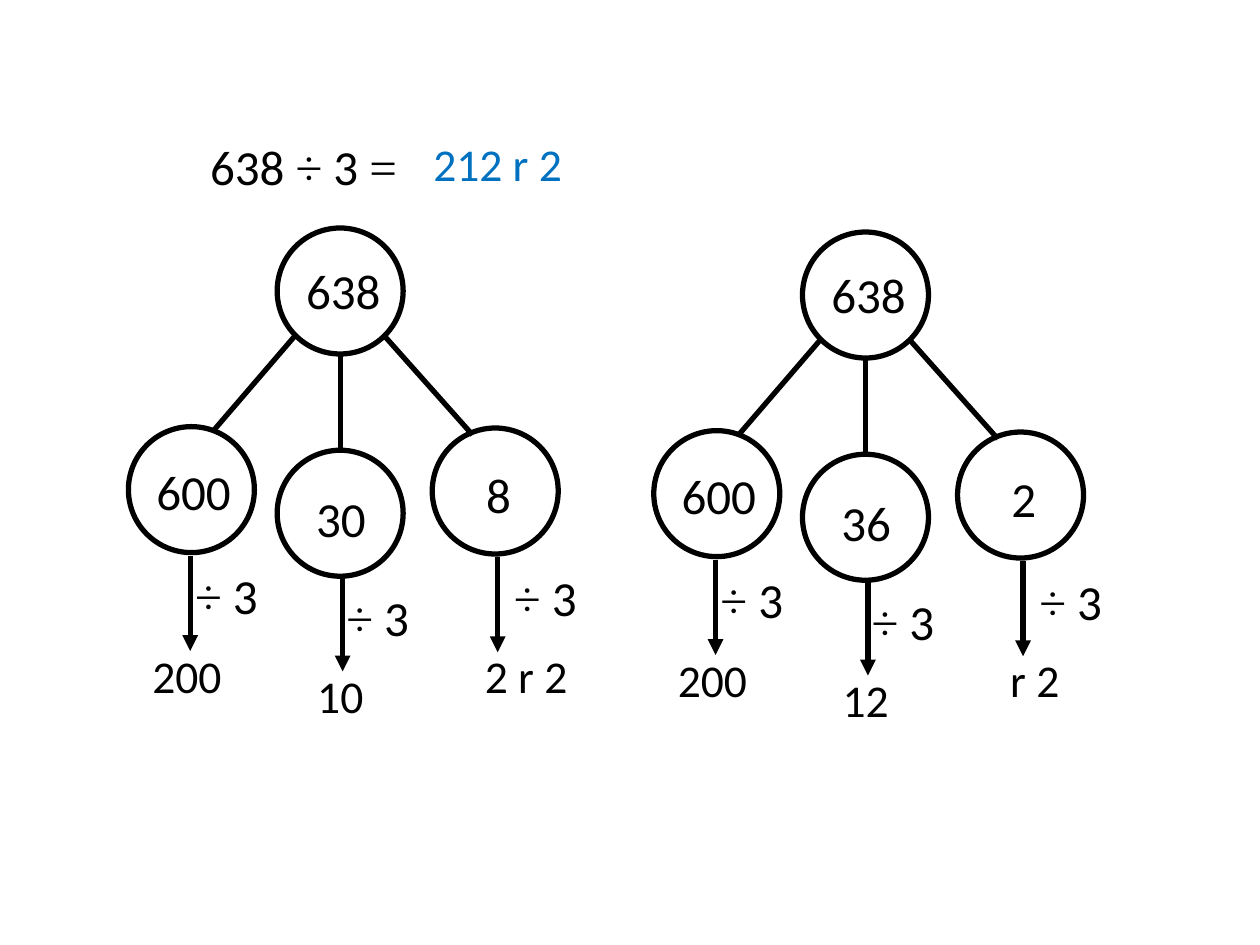
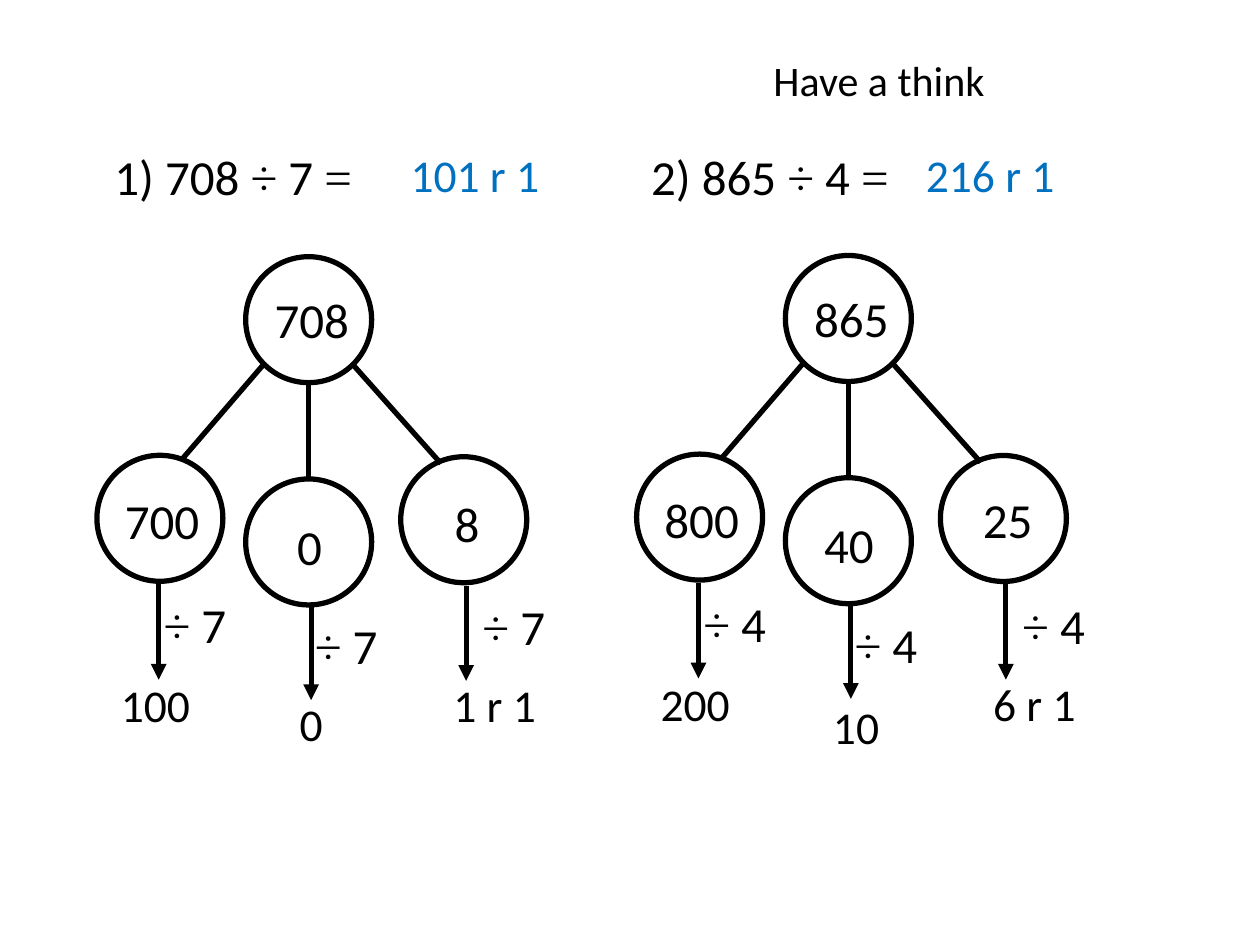
from dataclasses import dataclass
from itertools import groupby

from lxml import etree
from pptx import Presentation
from pptx.dml.color import RGBColor
from pptx.enum.shapes import MSO_CONNECTOR, MSO_SHAPE
from pptx.enum.text import MSO_AUTO_SIZE
from pptx.oxml.ns import qn
from pptx.util import Pt

OVAL = MSO_SHAPE.OVAL
STRAIGHT = MSO_CONNECTOR.STRAIGHT
GROW = MSO_AUTO_SIZE.SHAPE_TO_FIT_TEXT


@dataclass(frozen=True)
class Theme:
    ink: RGBColor = RGBColor(0, 0, 0)
    paper: RGBColor = RGBColor(255, 255, 255)
    answer: RGBColor = RGBColor(0x00, 0x70, 0xC0)
    text_font: str = "Calibri"
    symbol_font: str = "Times New Roman"
    number_size: int = 28
    result_size: int = 26
    note_size: int = 24
    line_width: int = 3


theme = Theme()
SYMBOLS = "÷="
DIAMETER = 72
ARROW_LENGTH = 54.5


def write_text(slide, text, left, top, width, height=41, size=theme.number_size,
               color=theme.ink, wrap=True):
    box = slide.shapes.add_textbox(Pt(left), Pt(top), Pt(width), Pt(height))
    frame = box.text_frame
    frame.word_wrap = wrap
    frame.auto_size = GROW
    paragraph = frame.paragraphs[0]
    for is_symbol, letters in groupby(text, key=lambda letter: letter in SYMBOLS):
        run = paragraph.add_run()
        run.text = "".join(letters)
        run.font.name = theme.symbol_font if is_symbol else theme.text_font
        run.font.size = Pt(size)
        run.font.color.rgb = color


def draw_line(shapes, start_x, start_y, end_x, end_y, arrow=False):
    connector = shapes.add_connector(STRAIGHT, Pt(start_x), Pt(start_y), Pt(end_x), Pt(end_y))
    connector.line.color.rgb = theme.ink
    connector.line.width = Pt(theme.line_width)
    properties = connector.line._get_or_add_ln()
    if arrow:
        etree.SubElement(properties, qn("a:tailEnd"), type="triangle")
    etree.SubElement(connector._element.spPr, qn("a:effectLst"))


circle_places = [(0, 0), (-85, 113.5), (0, 127), (88.6, 114.3)]
branch_lines = [(10.2, 61.6, -36, 115.3), (36, 72, 36, 126.5), (61.2, 61.6, 111.6, 118.2)]
number_places = [(-76.2, 130), (15.1, 145.1), (112.3, 131.6)]
arrow_places = [(-49.7, 187.2), (37.4, 198.9), (126, 187.9)]
divisor_places = [(-54, 189.5), (32.4, 201.6), (128.2, 190.7)]
quotient_places = [(-78.4, 236.7), (15.8, 247.7), (111.6, 236.7)]

slides = [
    {
        "notes": [],
        "sums": [("638 ÷ 3 =", 113, 74.2, 139)],
        "answers": [("212 r 2", 240.5, 74.2)],
        "trees": [
            {"left": 158.4, "top": 130.3, "whole": "638", "divisor": "÷ 3",
             "numbers": ["600", "30", "8"], "quotients": ["200", "10", "2 r 2"]},
            {"left": 458.6, "top": 132.6, "whole": "638", "divisor": "÷ 3",
             "numbers": ["600", "36", "2"], "quotients": ["200", "12", "r 2"]},
        ],
    },
    {
        "notes": [("Have a think", 434.9, 27.4)],
        "sums": [("1) 708 ÷ 7 =", 58.3, 80, 169), ("2) 865 ÷ 4 =", 365, 80, 169)],
        "answers": [("101 r 1", 227.5, 80.6), ("216 r 1", 522, 80.6)],
        "trees": [
            {"left": 140.4, "top": 146.7, "whole": "708", "divisor": "÷ 7",
             "numbers": ["700", "0", "8"], "quotients": ["100", "0", "1 r 1"],
             "number_shifts": [(0, 0), (7.2, 0), (0, 0)],
             "quotient_shifts": [(0, 0), (7.9, 0), (0, 0)]},
            {"left": 448.8, "top": 146, "whole": "865", "divisor": "÷ 4",
             "numbers": ["800", "40", "25"], "quotients": ["200", "10", "6 r 1"],
             "number_shifts": [(0, 0), (0, -0.7), (-6.5, -1.2)],
             "quotient_shifts": [(0, 0), (4.3, 2.2), (0, 0)]},
        ],
    },
]

presentation = Presentation()
presentation.slide_width = Pt(720)
presentation.slide_height = Pt(540)
blank_layout = presentation.slide_layouts[6]
no_shifts = [(0, 0)] * 3

for content in slides:
    slide = presentation.slides.add_slide(blank_layout)
    for text, left, top in content["notes"]:
        write_text(slide, text, left, top, 165, height=36, size=theme.note_size)
    for text, left, top, width in content["sums"]:
        write_text(slide, text, left, top, width)
    for text, left, top in content["answers"]:
        write_text(slide, text, left, top, 137, height=39, size=theme.result_size,
                   color=theme.answer)

    for tree in content["trees"]:
        left, top = tree["left"], tree["top"]
        group = slide.shapes.add_group_shape()
        for x, y in circle_places:
            circle = group.shapes.add_shape(OVAL, Pt(left + x), Pt(top + y),
                                            Pt(DIAMETER), Pt(DIAMETER))
            circle.shadow.inherit = False
            circle.fill.solid()
            circle.fill.fore_color.rgb = theme.paper
            circle.line.color.rgb = theme.ink
            circle.line.width = Pt(theme.line_width)
        for start_x, start_y, end_x, end_y in branch_lines:
            draw_line(group.shapes, left + start_x, top + start_y, left + end_x, top + end_y)

        write_text(slide, tree["whole"], left + 9.4, top + 15.1, 73.4)
        number_shifts = tree.get("number_shifts", no_shifts)
        quotient_shifts = tree.get("quotient_shifts", no_shifts)
        for index in range(3):
            x, y = number_places[index]
            shift_x, shift_y = number_shifts[index]
            write_text(slide, tree["numbers"][index], left + x + shift_x, top + y + shift_y, 73.4)
            x, y = arrow_places[index]
            draw_line(slide.shapes, left + x, top + y, left + x, top + y + ARROW_LENGTH,
                      arrow=True)
            x, y = divisor_places[index]
            write_text(slide, tree["divisor"], left + x, top + y, 56.2, wrap=False)
            x, y = quotient_places[index]
            shift_x, shift_y = quotient_shifts[index]
            write_text(slide, tree["quotients"][index], left + x + shift_x, top + y + shift_y,
                       77.8, height=39, size=theme.result_size)

presentation.save("out.pptx")
